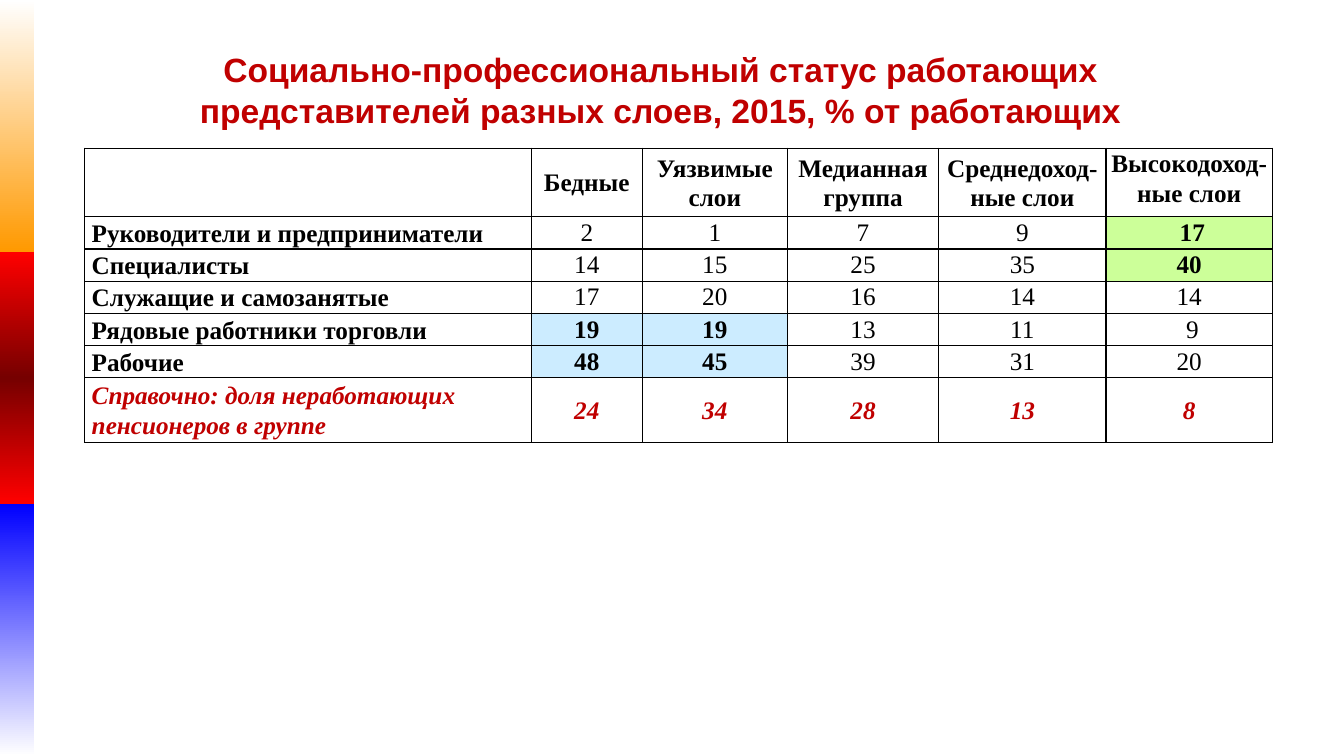
from copy import deepcopy

from lxml import etree
from pptx import Presentation
from pptx.dml.color import RGBColor
from pptx.enum.shapes import MSO_SHAPE
from pptx.enum.text import MSO_ANCHOR, PP_ALIGN
from pptx.oxml.ns import qn
from pptx.util import Emu, Pt

RECTANGLE = MSO_SHAPE.RECTANGLE
CENTER, LEFT = PP_ALIGN.CENTER, PP_ALIGN.LEFT
TOP, MIDDLE = MSO_ANCHOR.TOP, MSO_ANCHOR.MIDDLE

PX = 9144  # 100 px to the inch
BLACK, WHITE, RED = "000000", "FFFFFF", "C00000"
GREEN, BLUE = "CCFF99", "CCECFF"

BANDS = [
    [(0, "FFFFFF"), (1, "FF9900")],
    [(0, "FF0000"), (0.5, "760000"), (1, "FF0000")],
    [(0, "0000FF"), (1, "FFFFFF")],
]
TITLE = ("Социально-профессиональный статус работающих "
         "представителей разных слоев, 2015, % от работающих")
COLUMN_WIDTHS = [443, 110, 144, 150, 166, 165]
ROW_HEIGHTS = [68, 32, 32, 32, 32, 32, 64]
ROWS = [
    ["", "Бедные", "Уязвимые слои", "Медианная группа", "Среднедоход-ные слои",
     "Высокодоход-ные слои"],
    ["Руководители и предприниматели", "2", "1", "7", "9", " 17"],
    ["Специалисты", "14", "15", "25", "35", "40"],
    ["Служащие и самозанятые", "17", "20", "16", "14", "14"],
    ["Рядовые работники торговли", "19", "19", "13", "11", " 9"],
    ["Рабочие", "48", "45", "39", "31", "20"],
    ["Справочно: доля неработающих пенсионеров в группе", "24", "34", "28", "13", "8"],
]
HIGHLIGHTS = {(1, 5): GREEN, (2, 5): GREEN,
              (4, 1): BLUE, (4, 2): BLUE, (5, 1): BLUE, (5, 2): BLUE}
LAST_ROW, LAST_COLUMN = len(ROWS) - 1, len(COLUMN_WIDTHS) - 1


def px(value):
    return Emu(value * PX)


def color(value):
    return RGBColor.from_string(value)


def set_font(paragraph, name, size, font_color, bold, italic=False):
    for run in paragraph.runs:
        font = run.font
        font.name, font.size = name, Pt(size)
        font.bold, font.italic = bold, italic
        font.color.rgb = color(font_color)


def add_gradient_band(slide, top, stops):
    """Add a side band that shades from top to bottom through the stops."""
    shape = slide.shapes.add_shape(RECTANGLE, 0, px(top), px(34), px(250))
    shape.shadow.inherit = False
    shape.line.fill.background()
    shape.fill.gradient()
    shape.fill.gradient_angle = 270
    stop_list = shape._element.xpath(".//a:gsLst")[0]
    for _ in stops[2:]:
        stop_list.append(deepcopy(stop_list[0]))
    for stop, (position, stop_color) in zip(shape.fill.gradient_stops, stops):
        stop.position = position
        stop.color.rgb = color(stop_color)


def add_title(slide):
    text_frame = slide.shapes.add_textbox(px(84), px(44), px(1142), px(91)).text_frame
    text_frame.word_wrap = True
    text_frame.text = TITLE
    paragraph = text_frame.paragraphs[0]
    paragraph.alignment = CENTER
    set_font(paragraph, "Arial", 24, RED, True)


def set_borders(cell):
    """Draw thin black lines on all sides; call before the cell is filled."""
    properties = cell._tc.get_or_add_tcPr()
    for side in ("a:lnL", "a:lnR", "a:lnT", "a:lnB"):
        line = etree.SubElement(properties, qn(side), w=str(Pt(1)))
        fill = etree.SubElement(line, qn("a:solidFill"))
        etree.SubElement(fill, qn("a:srgbClr"), val=BLACK)


def format_cell(cell, row, column):
    is_header, is_label, is_note = row == 0, column == 0, row == LAST_ROW
    highlight = HIGHLIGHTS.get((row, column))
    set_borders(cell)
    cell.fill.solid()
    cell.fill.fore_color.rgb = color(highlight or WHITE)
    cell.margin_left = cell.margin_right = px(0 if column == LAST_COLUMN else 7)
    cell.margin_top = cell.margin_bottom = 0
    cell.vertical_anchor = TOP if is_header and column == LAST_COLUMN else MIDDLE

    paragraph = cell.text_frame.paragraphs[0]
    paragraph.alignment = LEFT if is_label else CENTER
    if is_header or is_label or is_note:
        paragraph.line_spacing = 1.07
    if is_header:
        paragraph.space_after = Pt(8)
    bold = is_header or is_label or is_note or highlight is not None
    set_font(paragraph, "Times New Roman", 18, RED if is_note else BLACK, bold, is_note)


def add_status_table(slide):
    frame = slide.shapes.add_table(
        len(ROWS), len(COLUMN_WIDTHS), px(84), px(147),
        px(sum(COLUMN_WIDTHS)), px(sum(ROW_HEIGHTS)))
    table = frame.table
    table.first_row = table.horz_banding = False
    for column, width in zip(table.columns, COLUMN_WIDTHS):
        column.width = px(width)
    for row, height in zip(table.rows, ROW_HEIGHTS):
        row.height = px(height)
    for row, texts in enumerate(ROWS):
        for column, text in enumerate(texts):
            cell = table.cell(row, column)
            cell.text_frame.text = text
            format_cell(cell, row, column)


def main():
    presentation = Presentation()
    presentation.slide_width, presentation.slide_height = px(1333), px(750)
    slide = presentation.slides.add_slide(presentation.slide_layouts[6])
    for index, stops in enumerate(BANDS):
        add_gradient_band(slide, index * 250, stops)
    add_status_table(slide)
    add_title(slide)
    presentation.save("out.pptx")


if __name__ == "__main__":
    main()
